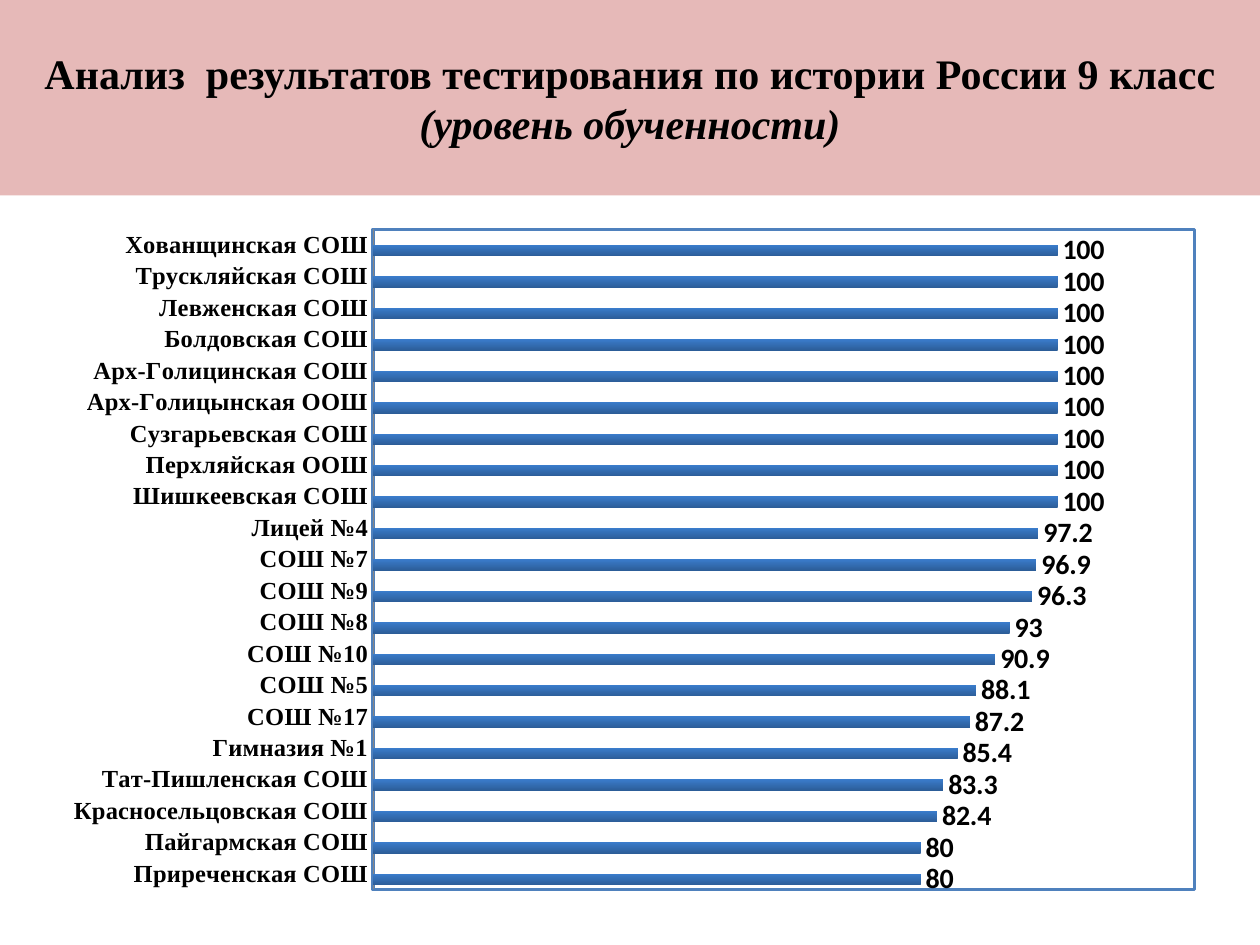
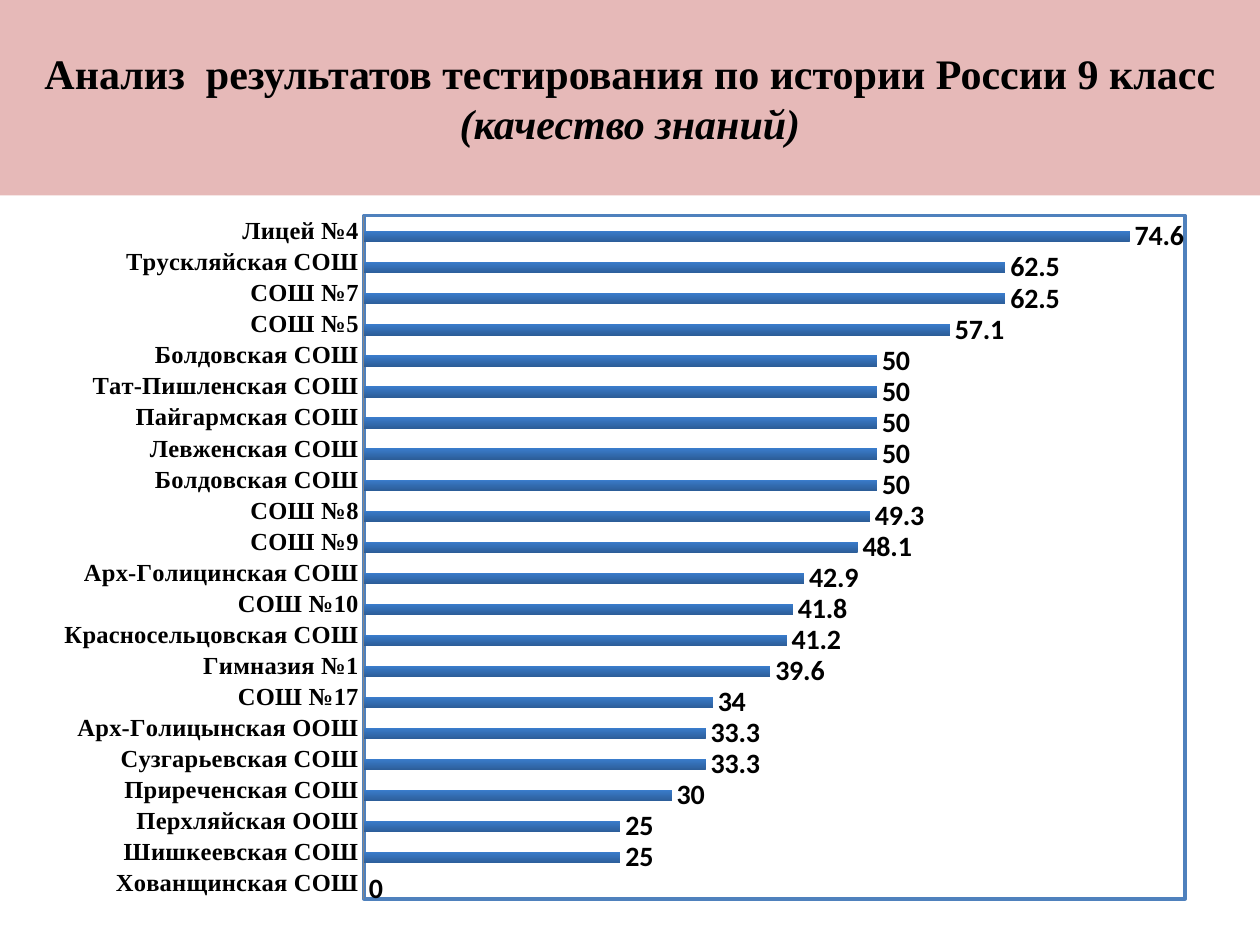
from pptx import Presentation
from pptx.chart.data import CategoryChartData
from pptx.dml.color import RGBColor
from pptx.enum.chart import XL_CHART_TYPE, XL_LABEL_POSITION, XL_TICK_MARK
from pptx.enum.text import MSO_ANCHOR, PP_ALIGN
from pptx.oxml import parse_xml
from pptx.util import Inches, Pt

COLORS = {name: RGBColor.from_string(value) for name, value in {
    "band": "E6B9B8", "text": "000000", "axis": "868686",
    "bar_bottom": "2C5D98", "bar_top": "3A7CCB", "second": "C0504D",
}.items()}
PLOT_FILL, PLOT_BORDER = "FFFFFF", "4F81BD"
HEADING = "Анализ  результатов тестирования по истории России 9 класс "
TITLE_FONT, CHART_FONT = "Times New Roman", "Calibri"
NS = ('xmlns:c="http://schemas.openxmlformats.org/drawingml/2006/chart" '
      'xmlns:a="http://schemas.openxmlformats.org/drawingml/2006/main"')

# Schools are listed from the bottom bar to the top one.
RESULTS = [
    {
        "measure": "(уровень обученности)", "height": 6.03, "axis_max": 120,
        "plot": (0.297, 0.058, 0.701, 0.869),
        "scores": [
            ("Приреченская СОШ", 80), ("Пайгармская СОШ", 80),
            ("Красносельцовская СОШ", 82.4), ("Тат-Пишленская СОШ", 83.3),
            ("Гимназия №1", 85.4), ("СОШ №17", 87.2), ("СОШ №5", 88.1),
            ("СОШ №10", 90.9), ("СОШ №8", 93), ("СОШ №9", 96.3),
            ("СОШ №7", 96.9), ("Лицей №4", 97.2),
            ("Шишкеевская СОШ", 100), ("Перхляйская ООШ", 100),
            ("Сузгарьевская СОШ", 100), ("Арх-Голицынская ООШ", 100),
            ("Арх-Голицинская СОШ", 100), ("Болдовская СОШ", 100),
            ("Левженская СОШ", 100), ("Трускляйская СОШ", 100),
            ("Хованщинская СОШ", 100),
        ],
    },
    {
        "measure": "(качество знаний)", "height": 5.75, "axis_max": 80,
        "plot": (0.289, 0.042, 0.701, 0.943),
        "scores": [
            ("Хованщинская СОШ", 0), ("Шишкеевская СОШ", 25),
            ("Перхляйская ООШ", 25), ("Приреченская СОШ", 30),
            ("Сузгарьевская СОШ", 33.3), ("Арх-Голицынская ООШ", 33.3),
            ("СОШ №17", 34), ("Гимназия №1", 39.6),
            ("Красносельцовская СОШ", 41.2), ("СОШ №10", 41.8),
            ("Арх-Голицинская СОШ", 42.9), ("СОШ №9", 48.1),
            ("СОШ №8", 49.3), ("Болдовская СОШ", 50),
            ("Левженская СОШ", 50), ("Пайгармская СОШ", 50),
            ("Тат-Пишленская СОШ", 50), ("Болдовская СОШ", 50),
            ("СОШ №5", 57.1), ("СОШ №7", 62.5),
            ("Трускляйская СОШ", 62.5), ("Лицей №4", 74.6),
        ],
    },
]


def style_font(font, name, size, bold):
    font.name, font.size, font.bold = name, Pt(size), bold
    font.color.rgb = COLORS["text"]


def frame_plot(chart, plot):
    """Fix the inner plot area, give it a border and clear the chart's background."""
    area = chart._chartSpace.chart.plotArea
    for old in area.findall("{*}layout"):
        area.remove(old)
    edges = "".join(f'<c:{tag} val="{share}"/>' for tag, share in zip("xywh", plot))
    area.insert(0, parse_xml(
        f'<c:layout {NS}><c:manualLayout><c:layoutTarget val="inner"/>'
        f'<c:xMode val="edge"/><c:yMode val="edge"/>{edges}'
        '</c:manualLayout></c:layout>'))
    area.append(parse_xml(
        f'<c:spPr {NS}><a:solidFill><a:srgbClr val="{PLOT_FILL}"/></a:solidFill>'
        f'<a:ln w="{Pt(2)}"><a:solidFill><a:srgbClr val="{PLOT_BORDER}"/>'
        '</a:solidFill></a:ln></c:spPr>'))
    chart._chartSpace.chart.addnext(parse_xml(
        f'<c:spPr {NS}><a:noFill/><a:ln><a:noFill/></a:ln></c:spPr>'))


prs = Presentation()
prs.slide_width, prs.slide_height = Inches(10), Inches(7.5)

for result in RESULTS:
    s = prs.slides.add_slide(prs.slide_layouts[5])

    title = s.shapes.title
    title.left, title.top = 0, 0
    title.width, title.height = prs.slide_width, Inches(1.55)
    title.fill.solid()
    title.fill.fore_color.rgb = COLORS["band"]
    tf = title.text_frame
    tf.word_wrap = True
    tf.vertical_anchor = MSO_ANCHOR.MIDDLE
    p = tf.paragraphs[0]
    p.alignment = PP_ALIGN.CENTER
    style_font(p.font, TITLE_FONT, 24, True)
    p.add_run().text = HEADING
    r = p.add_run()
    r.text = result["measure"]
    r.font.italic = True

    schools, values = zip(*result["scores"])
    data = CategoryChartData()
    data.categories = schools
    data.add_series("Series 1", values)
    data.add_series("Series 2", [None] * len(values))
    chart = s.shapes.add_chart(
        XL_CHART_TYPE.BAR_CLUSTERED, Inches(0.2), Inches(1.47),
        Inches(9.3), Inches(result["height"]), data).chart
    chart.has_legend = False
    chart.has_title = False
    style_font(chart.font, CHART_FONT, 18, False)
    frame_plot(chart, result["plot"])

    bars = chart.plots[0]
    bars.gap_width = 75
    bars.vary_by_categories = False
    scores, second = bars.series
    fill = scores.format.fill
    fill.gradient()
    fill.gradient_angle = 90
    for stop, shade in zip(fill.gradient_stops, ("bar_bottom", "bar_top")):
        stop.color.rgb = COLORS[shade]
    second.format.fill.solid()
    second.format.fill.fore_color.rgb = COLORS["second"]
    labels = scores.data_labels
    labels.show_value = True
    labels.position = XL_LABEL_POSITION.OUTSIDE_END
    style_font(labels.font, CHART_FONT, 16, True)

    axis = chart.category_axis
    axis.major_tick_mark = XL_TICK_MARK.NONE
    axis.format.line.color.rgb = COLORS["axis"]
    style_font(axis.tick_labels.font, TITLE_FONT, 14, True)
    axis = chart.value_axis
    axis.visible = False
    axis.has_major_gridlines = False
    axis.minimum_scale, axis.maximum_scale = 0, result["axis_max"]

prs.save("out.pptx")
